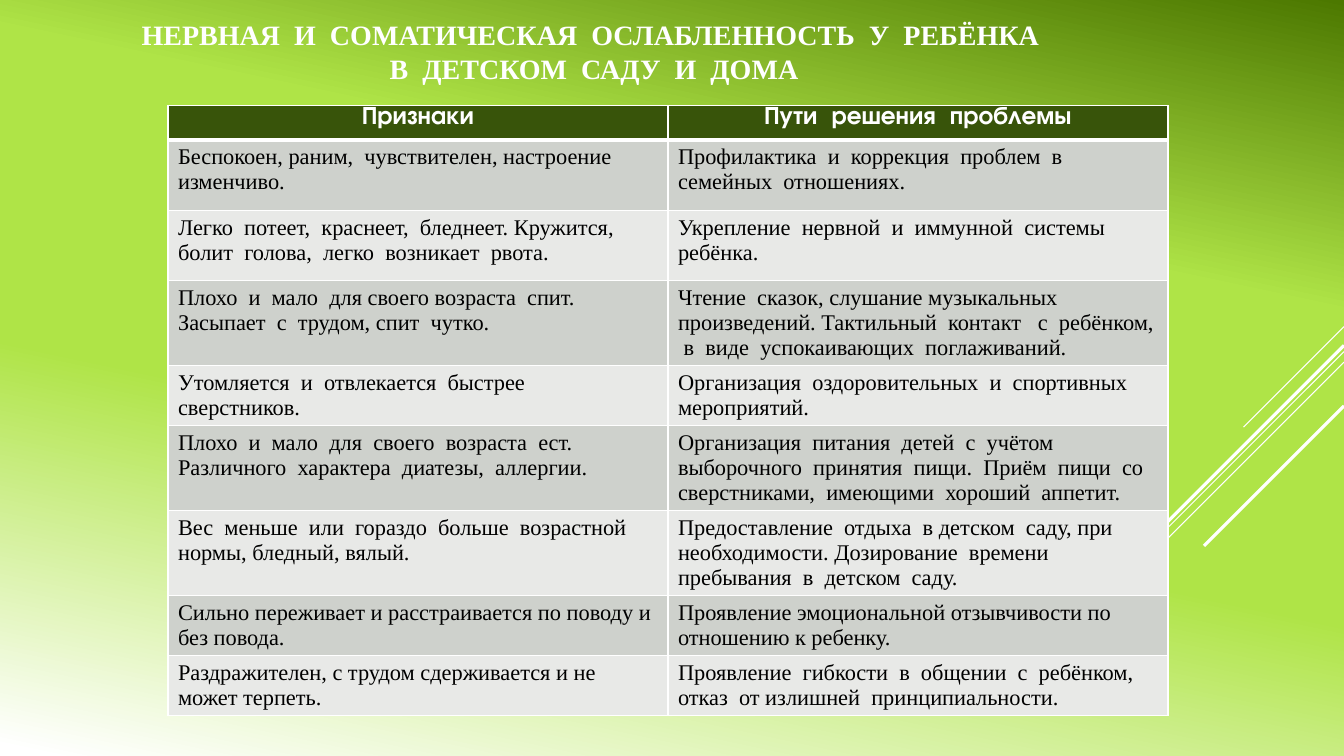
from lxml import etree
from pptx import Presentation, util as u
from pptx.dml.color import RGBColor
from pptx.enum import shapes, text
from pptx.oxml import parse_xml
from pptx.oxml.ns import nsdecls, qn

COLORS = {
    "white": "FFFFFF", "black": "000000", "header": "38540A",
    "band_dark": "CED1CC", "band_light": "E8E9E7",
    "shade": "4C7800", "lime": "AFE447",
}
SERIF, SANS = "Times New Roman", "TeX Gyre Adventor"

TITLE = "НЕРВНАЯ  И  СОМАТИЧЕСКАЯ  ОСЛАБЛЕННОСТЬ  У  РЕБЁНКА  В  ДЕТСКОМ  САДУ  И  ДОМА"

HEADINGS = ("Признаки", "Пути  решения  проблемы")

# Sign, remedy, row height as a percentage of the slide height
ROWS = [
    ("Беспокоен, раним,  чувствителен, настроение  изменчиво.",
     "Профилактика  и  коррекция  проблем  в  семейных  отношениях.", 9.3),
    ("Легко  потеет,  краснеет,  бледнеет. Кружится,  болит  голова,  легко  возникает  рвота.",
     "Укрепление  нервной  и  иммунной  системы  ребёнка.", 9.3),
    ("Плохо  и  мало  для своего возраста  спит. Засыпает  с  трудом, спит  чутко.",
     "Чтение  сказок, слушание музыкальных  произведений. Тактильный  контакт   с  ребёнком,"
     "  в  виде  успокаивающих  поглаживаний.", 11.25),
    ("Утомляется  и  отвлекается  быстрее  сверстников.",
     "Организация  оздоровительных  и  спортивных  мероприятий.", 7.9),
    ("Плохо  и  мало  для  своего  возраста  ест. Различного  характера  диатезы,  аллергии.",
     "Организация  питания  детей  с  учётом  выборочного  принятия  пищи.  Приём  пищи  со"
     "  сверстниками,  имеющими  хороший  аппетит.", 11.25),
    ("Вес  меньше  или  гораздо  больше  возрастной  нормы, бледный, вялый.",
     "Предоставление  отдыха  в детском  саду, при  необходимости. Дозирование  времени"
     "  пребывания  в  детском  саду.", 11.25),
    ("Сильно переживает и расстраивается по поводу и без повода.",
     "Проявление эмоциональной отзывчивости по отношению к ребенку.", 7.9),
    ("Раздражителен, с трудом сдерживается и не может терпеть.",
     "Проявление  гибкости  в  общении  с  ребёнком,  отказ  от излишней  принципиальности.", 7.9),
]
HEADER_HEIGHT = 4.5

# Start height and run (percentages of slide height), width in points
DIAGONALS = [(43.2, 13.3, 0.75), (46.5, 43.5, 0.75), (47.9, 27.6, 0.75),
             (45.7, 25.4, 2.25), (53.7, 18.5, 2.25)]


class SlideBuilder:
    """Places elements by percentages of the slide's width and height."""

    def __init__(self, prs):
        self.prs = prs
        self.s = prs.slides.add_slide(prs.slide_layouts[5])

    def x(self, share):
        return int(self.prs.slide_width * share / 100)

    def y(self, share):
        return int(self.prs.slide_height * share / 100)

    def color(self, name):
        return RGBColor.from_string(COLORS[name])

    def background(self, stops, angle):
        fill = self.s.background.fill
        fill.gradient()
        fill.gradient_angle = 360 - angle
        gs_list = next(self.s.element.iter(qn("a:gsLst")))
        for gs in list(gs_list):
            gs_list.remove(gs)
        for share, name in stops:
            gs = etree.SubElement(gs_list, qn("a:gs"), pos=str(share * 1000))
            etree.SubElement(gs, qn("a:srgbClr"), val=COLORS[name])

    def add_text(self, tf, content, size, font, color, bold=False, centred=False):
        p = tf.paragraphs[0]
        p.alignment = text.PP_ALIGN.CENTER if centred else text.PP_ALIGN.LEFT
        r = p.add_run()
        r.text = content
        r.font.size, r.font.name, r.font.bold = u.Pt(size), font, bold
        r.font.color.rgb = self.color(color)

    def title(self, content, left, top, width, height):
        sp = self.s.shapes.title
        sp.left, sp.top = self.x(left), self.y(top)
        sp.width, sp.height = self.x(width), self.y(height)
        tf = sp.text_frame
        tf.word_wrap, tf.auto_size = True, text.MSO_AUTO_SIZE.NONE
        tf.vertical_anchor = text.MSO_ANCHOR.MIDDLE
        self.add_text(tf, content, 20, SERIF, "white", bold=True, centred=True)

    def diagonal(self, start, run, width):
        """Line at 45 degrees down and left from the right edge."""
        right, top, run = self.x(100), self.y(start), self.y(run)
        line = self.s.shapes.add_connector(
            shapes.MSO_CONNECTOR.STRAIGHT, right, top, right - run, top + run)
        line.line.color.rgb = self.color("white")
        line.line.width = u.Pt(width)
        etree.SubElement(line.element.spPr, qn("a:effectLst"))

    def cell(self, cell, fill, top=1, bottom=1):
        tc_pr = cell._tc.get_or_add_tcPr()
        for side, width in (("L", 1), ("R", 1), ("T", top), ("B", bottom)):
            tc_pr.append(parse_xml(
                f'<a:ln{side} {nsdecls("a")} w="{u.Pt(width)}"><a:solidFill>'
                f'<a:srgbClr val="{COLORS["white"]}"/></a:solidFill></a:ln{side}>'))
        cell.fill.solid()
        cell.fill.fore_color.rgb = self.color(fill)

    def table(self, headings, rows, left, top, width):
        heights = [HEADER_HEIGHT] + [row[-1] for row in rows]
        table = self.s.shapes.add_table(
            len(heights), len(headings), self.x(left), self.y(top),
            self.x(width), self.y(sum(heights))).table
        for row, height in zip(table.rows, heights):
            row.height = self.y(height)
        # Header
        for cell, heading in zip(table.rows[0].cells, headings):
            self.cell(cell, "header", bottom=3)
            cell.margin_top = cell.margin_bottom = 0
            self.add_text(cell.text_frame, heading, 18, SANS, "white", bold=True, centred=True)
        # Banded body
        for i, row in enumerate(rows, start=1):
            band = "band_dark" if i % 2 else "band_light"
            for cell, content in zip(table.rows[i].cells, row[:-1]):
                self.cell(cell, band, top=3 if i == 1 else 1)
                self.add_text(cell.text_frame, content, 16, SERIF, "black")


def main():
    prs = Presentation()
    prs.slide_width, prs.slide_height = u.Inches(13.33), u.Inches(7.5)
    slide = SlideBuilder(prs)
    slide.background([(0, "shade"), (30, "lime"), (60, "lime"), (99, "white")], 102)
    slide.title(TITLE, 9.2, -0.5, 70, 14.5)
    for diagonal in DIAGONALS:
        slide.diagonal(*diagonal)
    slide.table(HEADINGS, ROWS, 12.5, 14, 74.4)
    prs.save("out.pptx")


if __name__ == "__main__":
    main()
